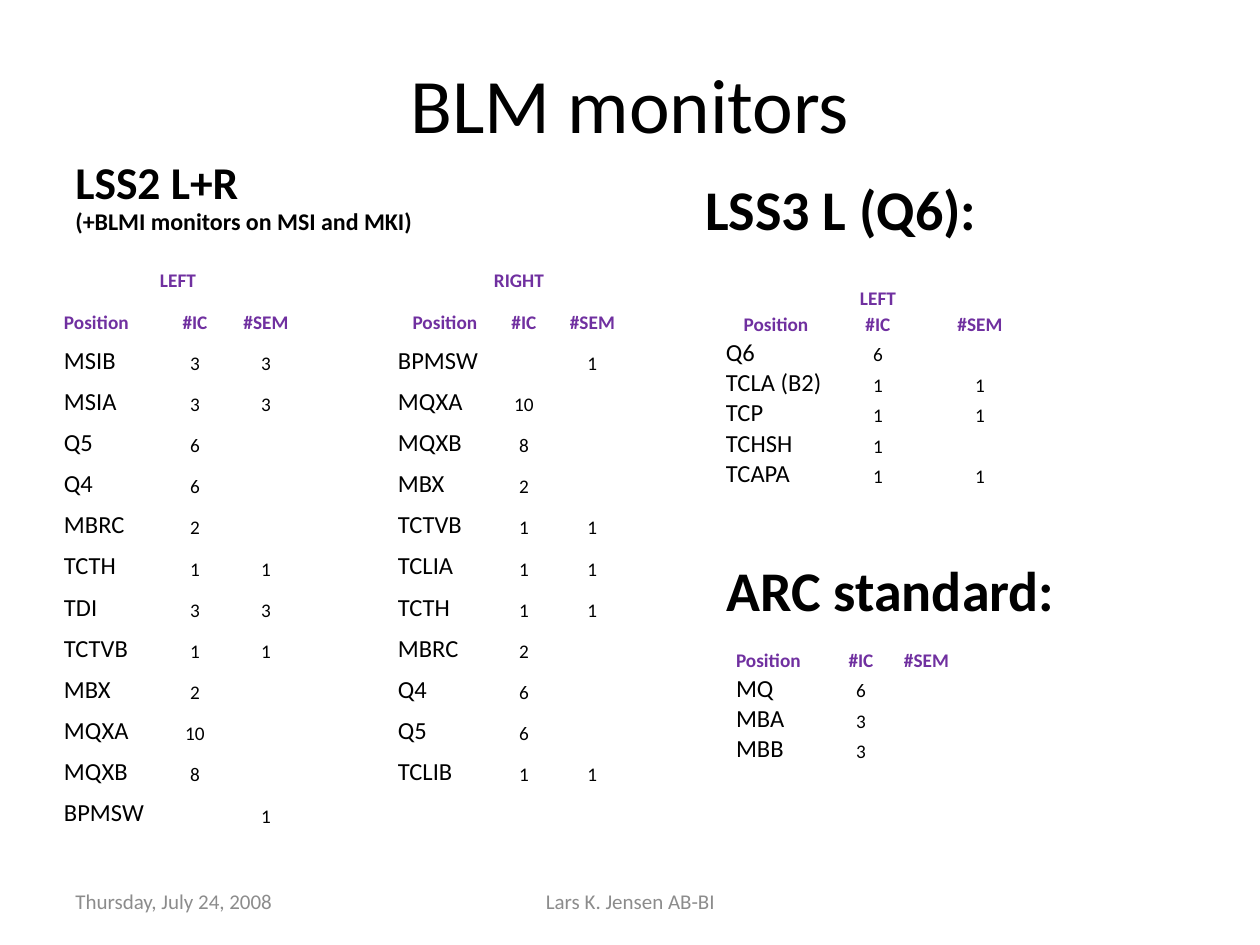
from lxml import etree
from pptx import Presentation
from pptx.dml.color import RGBColor
from pptx.enum.text import MSO_ANCHOR, PP_ALIGN
from pptx.oxml.ns import qn
from pptx.util import Emu, Pt

PX = 914400 / 126
FONT = "Calibri"
COLORS = {"text": "000000", "header": "7030A0", "footer": "8C8C8C"}
LEFT, CENTER = PP_ALIGN.LEFT, PP_ALIGN.CENTER
TOP, MIDDLE, BOTTOM = MSO_ANCHOR.TOP, MSO_ANCHOR.MIDDLE, MSO_ANCHOR.BOTTOM

# Header rows are (alignment, text) cells; body rows hold names and counts.
LSS2_HEADERS = [
    [None, (LEFT, "LEFT"), None, None, None, (LEFT, "RIGHT"), None],
    [(LEFT, "Position"), (CENTER, "#IC"), (CENTER, "#SEM"), None,
     (CENTER, "Position"), (CENTER, "#IC"), (CENTER, "#SEM")],
]
LSS2_ROWS = [
    ["MSIB", "3", "3", "", "BPMSW", "", "1"],
    ["MSIA", "3", "3", "", "MQXA", "10", ""],
    ["Q5", "6", "", "", "MQXB", "8", ""],
    ["Q4", "6", "", "", "MBX", "2", ""],
    ["MBRC", "2", "", "", "TCTVB", "1", "1"],
    ["TCTH", "1", "1", "", "TCLIA", "1", "1"],
    ["TDI", "3", "3", "", "TCTH", "1", "1"],
    ["TCTVB", "1", "1", "", "MBRC", "2", ""],
    ["MBX", "2", "", "", "Q4", "6", ""],
    ["MQXA", "10", "", "", "Q5", "6", ""],
    ["MQXB", "8", "", "", "TCLIB", "1", "1"],
    ["BPMSW", "", "1", "", "", "", ""],
]
LSS3_HEADERS = [
    [None, (CENTER, "LEFT"), None],
    [(CENTER, "Position"), (CENTER, "#IC"), (CENTER, "#SEM")],
]
LSS3_ROWS = [
    ["Q6", "6", ""],
    ["TCLA (B2)", "1", "1"],
    ["TCP", "1", "1"],
    ["TCHSH", "1", ""],
    ["TCAPA", "1", "1"],
]
ARC_HEADERS = [
    [None, None, None],
    [(LEFT, "Position"), (CENTER, "#IC"), (LEFT, "#SEM")],
]
ARC_ROWS = [["MQ", "6", ""], ["MBA", "3", ""], ["MBB", "3", ""]]


def px(value):
    return Emu(round(value * PX))


def write_text(paragraph, text, size, color="text", bold=False, align=LEFT,
               line_spacing=None, space_before=None):
    paragraph.alignment = align
    if line_spacing is not None:
        paragraph.line_spacing = line_spacing
    if space_before is not None:
        paragraph.space_before = Pt(space_before)
    run = paragraph.add_run()
    run.text = text
    run.font.name = FONT
    run.font.size = Pt(size)
    run.font.bold = bold
    run.font.color.rgb = RGBColor.from_string(COLORS[color])


def add_text_box(slide, left, top, width, height, text, size, anchor=TOP, **style):
    shape = slide.shapes.add_textbox(px(left), px(top), px(width), px(height))
    frame = shape.text_frame
    frame.word_wrap = True
    frame.vertical_anchor = anchor
    write_text(frame.paragraphs[0], text, size, **style)
    return frame


def prepare_cell(cell):
    cell.fill.background()
    cell.vertical_anchor = BOTTOM
    cell.margin_left = cell.margin_right = cell.margin_top = px(1)
    cell.margin_bottom = 0
    return cell.text_frame.paragraphs[0]


def shrink_empty(paragraph):
    """Keep an empty cell from stretching its row with the default text size."""
    end = etree.SubElement(paragraph._p, qn("a:endParaRPr"))
    end.set("sz", "1100")


def fill_header(paragraph, content):
    if content is None:
        shrink_empty(paragraph)
    else:
        align, text = content
        write_text(paragraph, text, 11, color="header", bold=True, align=align)


def fill_body(paragraph, content):
    if not content:
        shrink_empty(paragraph)
    elif content.isdigit():
        write_text(paragraph, content, 11, align=CENTER)
    else:
        write_text(paragraph, content, 14)


def add_monitor_table(slide, left, top, widths, height, headers, rows):
    count = len(headers) + len(rows)
    shape = slide.shapes.add_table(count, len(widths), px(left), px(top),
                                   px(sum(widths)), px(height))
    table = shape.table
    table.first_row = False
    table.horz_banding = False
    for column, width in zip(table.columns, widths):
        column.width = px(width)
    for row in table.rows:
        row.height = px(height / count)
    for row_index, contents in enumerate(headers + rows):
        fill = fill_header if row_index < len(headers) else fill_body
        for column_index, content in enumerate(contents):
            fill(prepare_cell(table.cell(row_index, column_index)), content)


def main():
    presentation = Presentation()
    presentation.slide_width, presentation.slide_height = px(1260), px(945)
    slide = presentation.slides.add_slide(presentation.slide_layouts[6])

    add_text_box(slide, 63, 38, 1134, 130, "BLM monitors", 44,
                 anchor=MIDDLE, align=CENTER)
    add_text_box(slide, 693, 168, 504, 94, "LSS3 L (Q6):", 32, bold=True)
    add_text_box(slide, 63, 876, 294, 50, "Thursday, July 24, 2008", 12,
                 anchor=MIDDLE, color="footer")
    add_text_box(slide, 431, 876, 399, 50, "Lars K. Jensen AB-BI", 12,
                 anchor=MIDDLE, color="footer", align=CENTER)
    heading = add_text_box(slide, 63, 158, 557, 94, "LSS2 L+R", 26,
                           bold=True, line_spacing=0.8)
    write_text(heading.add_paragraph(), "(+BLMI monitors on MSI and MKI)", 13.7,
               bold=True, line_spacing=0.8, space_before=2.7)

    add_monitor_table(slide, 63, 252, [96, 72, 70, 96, 96, 62, 75], 577,
                      LSS2_HEADERS, LSS2_ROWS)
    add_monitor_table(slide, 725, 284, [102] * 3, 185, LSS3_HEADERS, LSS3_ROWS)
    add_monitor_table(slide, 735, 620, [84] * 3, 132, ARC_HEADERS, ARC_ROWS)
    add_text_box(slide, 714, 557, 441, 73, "ARC standard:", 32,
                 bold=True, line_spacing=0.9)

    presentation.save("out.pptx")


if __name__ == "__main__":
    main()
